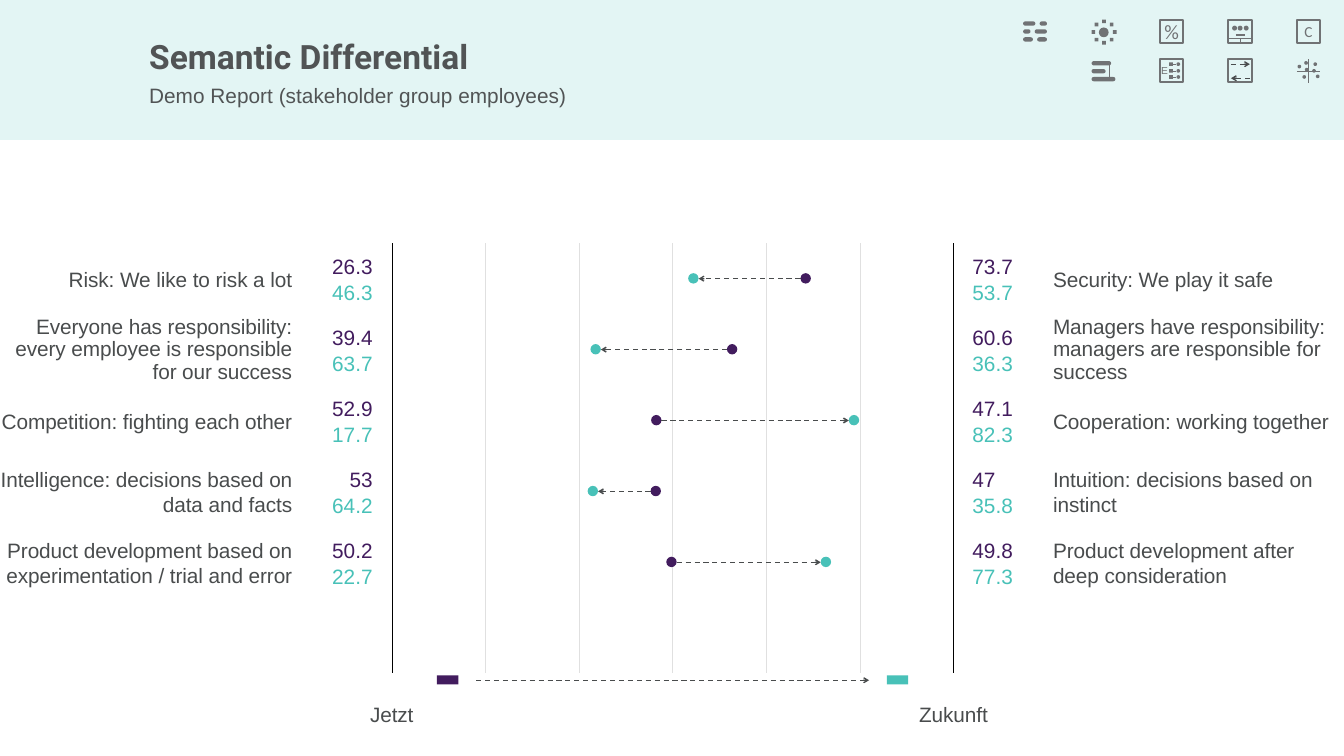
from math import cos, pi, sin

from lxml import etree
from pptx import Presentation
from pptx.dml.color import RGBColor as Rgb
from pptx.enum.dml import MSO_LINE as Dash
from pptx.enum.shapes import MSO_CONNECTOR as Link, MSO_SHAPE as Kind
from pptx.enum.text import MSO_ANCHOR as Anchor, PP_ALIGN as Align
from pptx.oxml.ns import qn
from pptx.util import Pt

PX = 9144  # 100 px to the inch
WIDE, HIGH = 2199, 1237
COLORS = {"band": "49C0B6", "title": "515455", "icon": "707274",
          "text": "494C4D", "now": "421C5E", "next": "48C1B8",
          "axis": "000000", "grid": "E0E0E0"}
ROW, DOT, ICON, PITCH = 116, 17, 38, 112
LONG = 64  # labels longer than this get tighter lines

# Left pole, right pole, right-hand score now and in future
ITEMS = [
    ("Risk: We like to risk a lot", "Security: We play it safe", 73.7, 53.7),
    ("Everyone has responsibility: every employee is responsible for our success",
     "Managers have responsibility: managers are responsible for success", 60.6, 36.3),
    ("Competition: fighting each other", "Cooperation: working together", 47.1, 82.3),
    ("Intelligence: decisions based on data and facts",
     "Intuition: decisions based on instinct", 47, 35.8),
    ("Product development based on experimentation / trial and error",
     "Product development after deep consideration", 49.8, 77.3),
]

deck = Presentation()
deck.slide_width, deck.slide_height = WIDE * PX, HIGH * PX
slide = deck.slides.add_slide(deck.slide_layouts[6])


def color(name):
    return Rgb.from_string(COLORS[name])


def emu(*sizes):
    return [round(size * PX) for size in sizes]


def shape(kind, x, y, w, h, fill="icon"):
    part = slide.shapes.add_shape(kind, *emu(x, y, w, h))
    part.shadow.inherit = False
    part.line.fill.background()
    part.fill.solid()
    part.fill.fore_color.rgb = color(fill)
    return part


def line(x1, y1, x2, y2, tint="icon", width=0.87, arrow=False):
    part = slide.shapes.add_connector(Link.STRAIGHT, *emu(x1, y1, x2, y2))
    part.line.color.rgb = color(tint)
    part.line.width = Pt(width)
    if arrow:
        part.line.dash_style = Dash.DASH
        etree.SubElement(part.line._ln, qn("a:tailEnd"), type="arrow")
    etree.SubElement(part._element.spPr, qn("a:effectLst"))


def arrow(x1, y1, x2, y2):
    line(x1, y1, x2, y2, "text", 1.5, True)


def text(x, y, w, h, words, tints=("text",), sizes=(24.5,), fonts=("Arial",),
         align=Align.LEFT, gaps=(1.2,), track=0, top=2, anchor=Anchor.MIDDLE):
    frame = slide.shapes.add_textbox(*emu(x, y, w, h)).text_frame
    frame.word_wrap = True
    frame.vertical_anchor = anchor
    frame.margin_left = frame.margin_right = frame.margin_bottom = 0
    frame.margin_top = top * PX
    frame.text = words
    for i, para in enumerate(frame.paragraphs):
        para.alignment = align
        para.space_before = Pt(gaps[i % len(gaps)])
        if len(para.text) > LONG:
            para.line_spacing = 0.9
        run = para.runs[0]
        run.font.size = Pt(sizes[i % len(sizes)])
        run.font.name = fonts[i % len(fonts)]
        run.font.color.rgb = color(tints[i % len(tints)])
        run.font._element.set("spc", str(track))
    return frame


# Icons, each drawn from its top left corner
def frame(x, y):
    box = shape(Kind.RECTANGLE, x, y, ICON, ICON)
    box.fill.background()
    box.line.color.rgb = color("icon")
    box.line.width = Pt(2.36)


def pill(x, y, w):
    shape(Kind.ROUNDED_RECTANGLE, x, y, w, 7).adjustments[0] = 0.5


def glyph(x, y, w, sign, size, font="Calibri"):
    text(x, y, w, ICON, sign, ("icon",), (size,), (font,), Align.CENTER, (0,), top=0)


def dashes(x, y):
    for i, (cut, start) in enumerate([(20, 27), (12, 19), (16, 23)]):
        pill(x, y + 3 + 13 * i, cut)
        pill(x + start, y + 3 + 13 * i, 39 - start)


def sun(x, y):
    shape(Kind.OVAL, x + 12, y + 13, 16, 16)
    for i in range(8):
        turn = i * pi / 4
        shape(Kind.RECTANGLE, x + 17.5 + 17.5 * cos(turn),
              y + 17.5 + 17.5 * sin(turn), 6, 6)


def percent(x, y):
    frame(x, y)
    glyph(x, y, ICON, "%", 24)


def panel(x, y):
    frame(x, y)
    line(x, y + 31, x + ICON, y + 31)
    line(x + 19, y + 31, x + 19, y + ICON)
    for dx in (6, 15, 25):
        shape(Kind.OVAL, x + dx, y + 10, 8, 8)
    line(x + 12, y + 26, x + 27, y + 26, width=2.36)


def letter(x, y):
    frame(x, y)
    glyph(x, y, ICON, "C", 18)


def bars(x, y):
    for i, w in enumerate((32, 23, 39)):
        pill(x, y + 3 + 13 * i, w)
    line(x + 29, y + 6, x + 29, y + 32)


def scale(x, y):
    frame(x, y)
    glyph(x, y, 15, "E", 12, "Arial")
    for dy in (5, 16, 26):
        shape(Kind.RECTANGLE, x + 15, y + dy, 6, 6)
        line(x + 20, y + dy + 3, x + 26, y + dy + 3)
        shape(Kind.OVAL, x + 27, y + dy, 6, 6)


def swap(x, y):
    frame(x, y)
    arrow(x + 4, y + 8, x + 35, y + 8)
    arrow(x + 35, y + 31, x + 4, y + 31)


def scatter(x, y):
    for dx, dy in [(1, 9), (13, 14), (27, 5), (31, 25), (9, 26), (12, 3), (25, 16)]:
        shape(Kind.OVAL, x + dx, y + dy, 6, 6)
    line(x, y + 19, x + ICON, y + 19)
    line(x + 19, y, x + 19, y + ICON)


def menu(x, y):
    rows = [(dashes, sun, percent, panel, letter), (None, bars, scale, swap, scatter)]
    for r, row in enumerate(rows):
        for c, draw in enumerate(row):
            if draw:
                draw(x + PITCH * c, y + 65 * r)


def header(x, y, w, h):
    band = shape(Kind.RECTANGLE, x, y, w, h, "band")
    tint = band.fill._xPr.find(qn("a:solidFill"))[0]
    etree.SubElement(tint, qn("a:alpha"), val="15000")
    title = text(x + 244, y + 42, 1422, 135,
                 "Semantic Differential\nDemo Report (stakeholder group employees)",
                 ("title",), (39.5, 24.5), ("Roboto", "Arial"),
                 gaps=(12.2, 7.2), track=5, top=17, anchor=Anchor.TOP)
    title.paragraphs[0].runs[0].font.bold = True
    menu(x + 1674, y + 32)


# Scores between two poles
def chart(x, y, w, h):
    for i in [0, 6, 1, 2, 3, 4, 5]:
        at = x + w * i / 6
        line(at, y, at, y + h, "axis" if i in (0, 6) else "grid", 0.41)
    for i, (left, right, *scores) in enumerate(ITEMS):
        top = y + ROW * i
        now, later = [x + w * score / 100 for score in scores]
        for at, tint in ((now, "now"), (later, "next")):
            shape(Kind.OVAL, at - DOT / 2, top + 49, DOT, DOT, tint)
        edge = DOT / 2 if later > now else -DOT / 2
        arrow(now + edge, top + 58, later - edge, top + 58)
        text(x - 641, top, 478, ROW, left, align=Align.RIGHT, track=-10)
        text(x + w + 163, top, 476, ROW, right, track=-10)
        rest = [100 - score for score in scores]
        for dx, pair, side in ((-131, rest, Align.RIGHT), (w + 31, scores, Align.LEFT)):
            text(x + dx, top, 100, ROW, "\n".join(f"{n:.3g}" for n in pair),
                 ("now", "next"), align=side, track=10)


def legend(x, y, w, h):
    for word, dx, mark, tint in (("Jetzt", 0, 74, "now"), ("Zukunft", w, w - 109, "next")):
        shape(Kind.RECTANGLE, x + mark, y, 35, 15, tint)
        text(x + dx - 151, y + 5, 302, h, word, align=Align.CENTER, track=-10)
    arrow(x + 138, y + 8, x + w - 138, y + 8)


header(0, 0, WIDE, 229)
chart(641, 398, 919, 704)
legend(641, 1105, 919, ROW)
deck.save("out.pptx")
